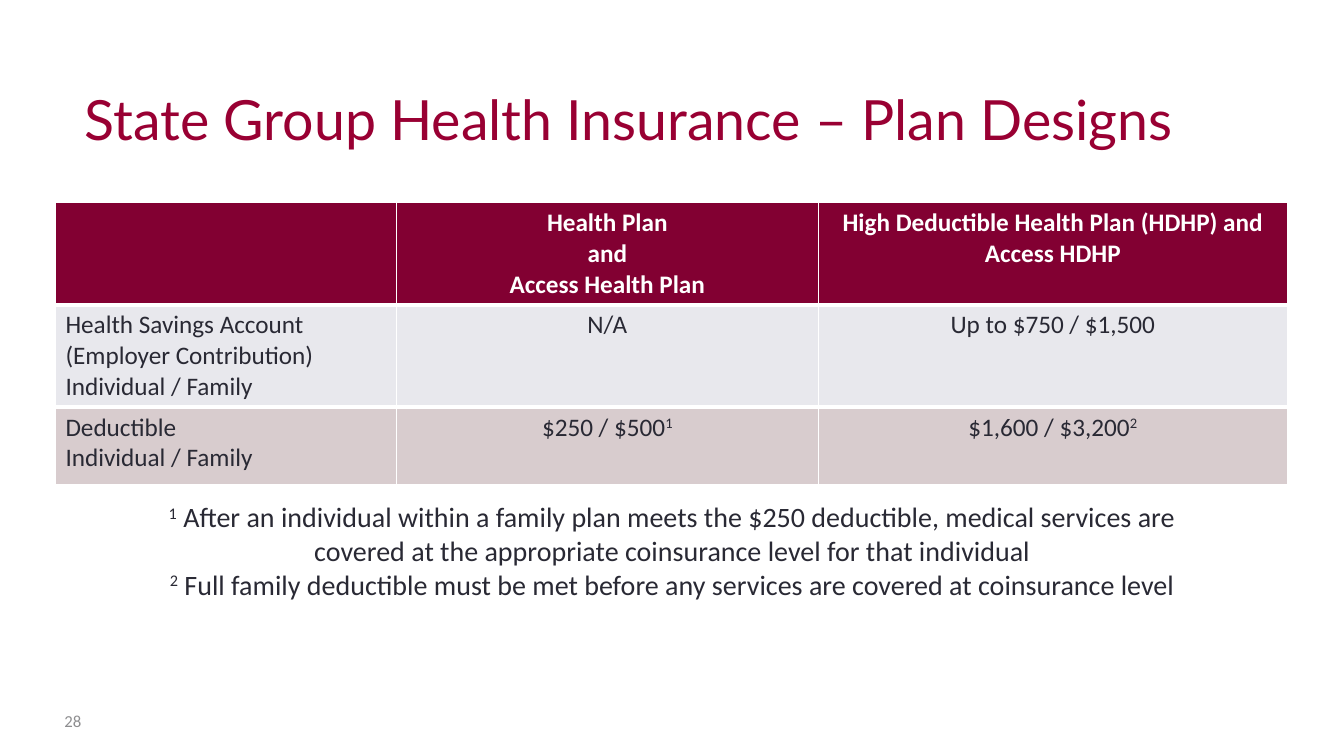
import pptx
import pptx.dml.color
import pptx.enum.text
import pptx.oxml
import pptx.oxml.ns
import pptx.util

Pt = pptx.util.Pt
ALIGN = pptx.enum.text.PP_ALIGN
ANCHOR = pptx.enum.text.MSO_ANCHOR
COLORS = {
    "title": "990033",
    "header": "820032",
    "savings": "E8E8ED",
    "deductible": "D8CCCE",
    "ink": "292934",
    "white": "FFFFFF",
    "number": "8E8E90",
}


def write(frame, paragraphs, size=18, font="Calibri", color="ink", bold=False,
          align=ALIGN.LEFT, anchor=ANCHOR.TOP):
    frame.word_wrap = True
    frame.vertical_anchor = anchor
    for index, text in enumerate(paragraphs):
        paragraph = frame.paragraphs[0] if index == 0 else frame.add_paragraph()
        paragraph.alignment = align
        for part, piece in enumerate(text.split("^")):
            if not piece:
                continue
            run = paragraph.add_run()
            run.text = piece
            run.font.size = Pt(size)
            run.font.name = font
            run.font.bold = bold
            run.font.color.rgb = pptx.dml.color.RGBColor.from_string(COLORS[color])
            if part % 2:
                run.font._element.set("baseline", "30000")


def set_border(cell, side, width):
    cell._tc.get_or_add_tcPr().append(pptx.oxml.parse_xml(
        f'<a:{side} {pptx.oxml.ns.nsdecls("a")} w="{Pt(width)}"><a:solidFill>'
        f'<a:srgbClr val="{COLORS["white"]}"/></a:solidFill></a:{side}>'))


deck = pptx.Presentation()
deck.slide_width, deck.slide_height = Pt(960), Pt(540)
slide = deck.slides.add_slide(deck.slide_layouts[5])

title = slide.shapes.title
title.left, title.top, title.width, title.height = Pt(53.3), Pt(21.6), Pt(859.7), Pt(90)
write(title.text_frame, ["State Group Health Insurance – Plan Designs"],
      size=39.6, font="Lato", color="title", anchor=ANCHOR.BOTTOM)
title.text_frame.auto_size = pptx.enum.text.MSO_AUTO_SIZE.NONE

page_number = slide.shapes.add_textbox(Pt(38.9), Pt(500.4), Pt(40.3), Pt(28.8))
write(page_number.text_frame, ["28"], size=12, color="number", anchor=ANCHOR.MIDDLE)

plan_rows = [
    ("header", 73, [
        [],
        ["Health Plan", "and", "Access Health Plan"],
        ["High Deductible Health Plan (HDHP) and", "Access HDHP"],
    ]),
    ("savings", 73, [
        ["Health Savings Account (Employer Contribution)", "Individual / Family"],
        ["N/A"],
        ["Up to $750 / $1,500"],
    ]),
    ("deductible", 55.4, [
        ["Deductible", "Individual / Family"],
        ["$250 / $500^1^"],
        ["$1,600 / $3,200^2^"],
    ]),
]
column_widths = [243.4, 301.7, 334.8]
plans = slide.shapes.add_table(
    len(plan_rows), len(column_widths), Pt(39.6), Pt(144.7),
    Pt(sum(column_widths)), Pt(sum(height for _, height, _ in plan_rows))).table
for column, width in zip(plans.columns, column_widths):
    column.width = Pt(width)

for row, (band, height, texts) in enumerate(plan_rows):
    plans.rows[row].height = Pt(height)
    is_header = row == 0
    is_last = row == len(plan_rows) - 1
    for column, text in enumerate(texts):
        cell = plans.cell(row, column)
        write(cell.text_frame, text,
              color="white" if is_header else "ink", bold=is_header,
              align=ALIGN.CENTER if column else ALIGN.LEFT)
        for side, width in (("lnL", 1), ("lnR", 1),
                            ("lnT", 1 if is_header else 3),
                            ("lnB", 1 if is_last else 3)):
            set_border(cell, side, width)
        cell.fill.solid()
        cell.fill.fore_color.rgb = pptx.dml.color.RGBColor.from_string(COLORS[band])

footnotes = slide.shapes.add_textbox(Pt(40.3), Pt(353.5), Pt(879.8), Pt(79.9))
write(footnotes.text_frame, [
    "^1^ After an individual within a family plan meets the $250 deductible, medical services are",
    "covered at the appropriate coinsurance level for that individual",
    "^2^ Full family deductible must be met before any services are covered at coinsurance level",
], size=20, align=ALIGN.CENTER)

deck.save("out.pptx")
